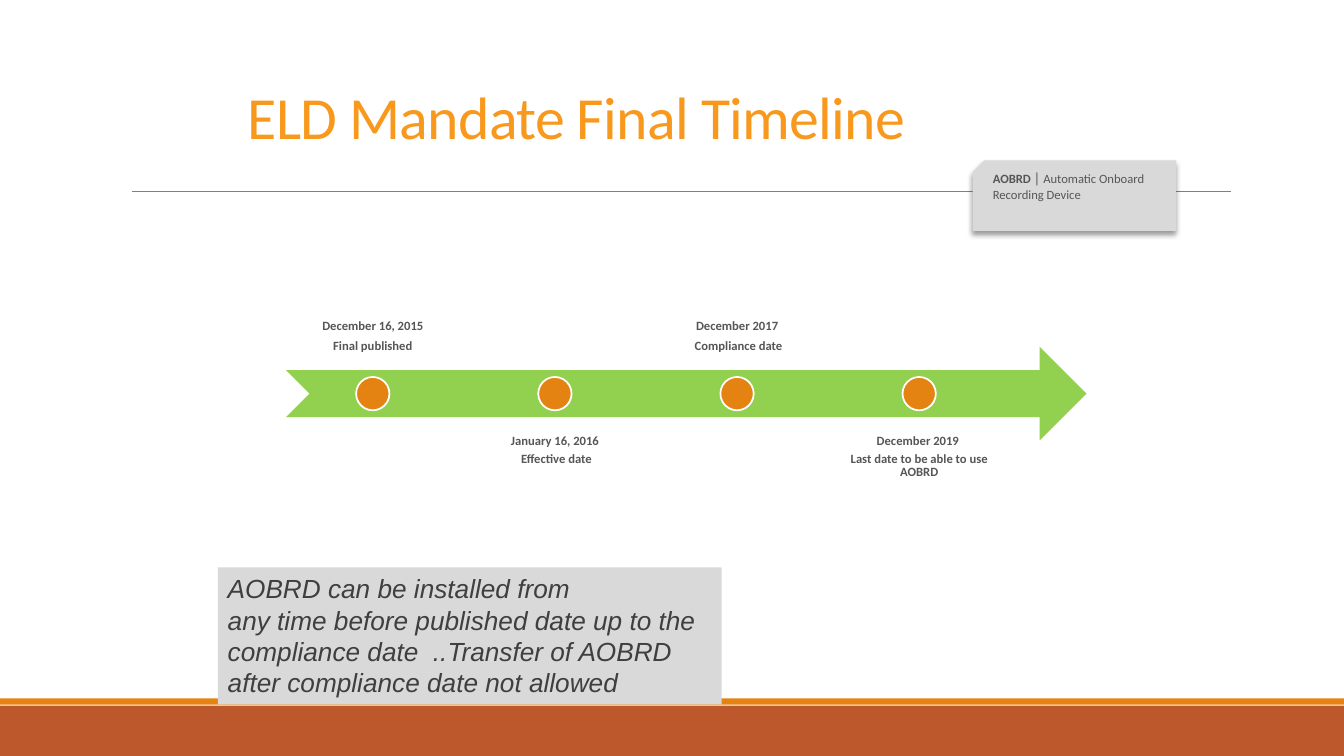
from lxml.etree import SubElement
from pptx import Presentation
from pptx.dml.color import RGBColor
from pptx.enum.shapes import MSO_CONNECTOR as Connector, MSO_SHAPE as Preset
from pptx.enum.text import MSO_ANCHOR as Anchor, PP_ALIGN as Align
from pptx.oxml.ns import qn
from pptx.util import Cm, Pt

WHITE = RGBColor(0xFF, 0xFF, 0xFF)
BLACK = RGBColor(0x00, 0x00, 0x00)
RUST = RGBColor(0xBD, 0x58, 0x2C)
ORANGE = RGBColor(0xE4, 0x83, 0x12)
TITLE_ORANGE = RGBColor(0xF8, 0x99, 0x1D)
GREEN = RGBColor(0x92, 0xD0, 0x50)
RULE_GRAY = RGBColor(0x80, 0x80, 0x80)
PANEL_GRAY = RGBColor(0xD9, 0xD9, 0xD9)
LABEL_GRAY = RGBColor(0x56, 0x56, 0x56)
NOTE_GRAY = RGBColor(0x3F, 0x3F, 0x3F)

MILESTONES = [
    ("December 16, 2015", "Final published"),
    ("January 16, 2016", " Effective date"),
    ("December 2017", " Compliance date"),
    ("December 2019 ", "Last date to be able to use AOBRD"),
]
LABEL_LEFT, LABEL_WIDTH, LABEL_HEIGHT = 7.21, 4.37, 3.38
LABEL_STEP = 4.59
DOT_SIZE = 0.84


def add_solid(page, preset, left, top, width, height, fill, outline=None):
    shape = page.shapes.add_shape(preset, Cm(left), Cm(top), Cm(width), Cm(height))
    shape.shadow.inherit = False
    shape.fill.solid()
    shape.fill.fore_color.rgb = fill
    if outline is None:
        shape.line.fill.background()
    else:
        shape.line.color.rgb = outline
        shape.line.width = Pt(1.25)
    return shape


def add_rule(page, left, right, top):
    rule = page.shapes.add_connector(
        Connector.STRAIGHT, Cm(left), Cm(top), Cm(right), Cm(top))
    rule.line.color.rgb = RULE_GRAY
    rule.line.width = Pt(0.5)
    SubElement(rule._element.spPr, qn("a:effectLst"))


def add_text_box(page, left, top, width, height, anchor=Anchor.TOP):
    box = page.shapes.add_textbox(Cm(left), Cm(top), Cm(width), Cm(height))
    box.text_frame.word_wrap = True
    box.text_frame.vertical_anchor = anchor
    return box.text_frame


def add_span(para, text, size, color, font="Calibri", bold=False, italic=False):
    span = para.add_run()
    span.text = text
    span.font.name = font
    span.font.size = Pt(size)
    span.font.color.rgb = color
    span.font.bold = bold
    span.font.italic = italic
    return span


def add_drop_shadow(shape):
    effects = shape._element.spPr.find(qn("a:effectLst"))
    shadow = SubElement(effects, qn("a:outerShdw"), blurRad=str(Pt(4)),
                        dist=str(Pt(3)), dir="5400000", rotWithShape="0")
    color = SubElement(shadow, qn("a:srgbClr"), val=str(BLACK))
    SubElement(color, qn("a:alpha"), val="40000")


def add_milestone(page, index, lines):
    above = index % 2 == 0
    left = LABEL_LEFT + index * LABEL_STEP
    frame = add_text_box(page, left, 5.69 if above else 10.77, LABEL_WIDTH,
                         LABEL_HEIGHT, Anchor.BOTTOM if above else Anchor.TOP)
    frame.margin_left = frame.margin_right = Cm(0.18)
    frame.margin_top = frame.margin_bottom = Cm(0.18)
    for number, line in enumerate(lines):
        para = frame.add_paragraph() if number else frame.paragraphs[0]
        para.alignment = Align.CENTER
        para.line_spacing = 0.9
        para.space_after = Pt(4 if above else 3)
        add_span(para, line, 9, LABEL_GRAY, bold=True)
    add_solid(page, Preset.OVAL, left + (LABEL_WIDTH - DOT_SIZE) / 2, 9.5,
              DOT_SIZE, DOT_SIZE, ORANGE, WHITE)


def add_callout(page):
    panel = add_solid(page, Preset.SNIP_1_RECTANGLE, 24.51, 4.04, 5.13, 1.78, PANEL_GRAY)
    panel._element.spPr.find(qn("a:xfrm")).set("flipH", "1")
    add_drop_shadow(panel)
    para = add_text_box(page, 24.77, 4.14, 4.78, 1.09).paragraphs[0]
    add_span(para, "AOBRD ", 9, LABEL_GRAY, bold=True)
    add_span(para, "|", 10.5, LABEL_GRAY)
    add_span(para, " Automatic Onboard", 9, LABEL_GRAY)
    para.add_line_break()
    add_span(para, "Recording Device", 9, LABEL_GRAY)


def add_note(page):
    note = add_solid(page, Preset.RECTANGLE, 5.49, 14.3, 12.7, 3.45, PANEL_GRAY)
    frame = note.text_frame
    frame.word_wrap = True
    frame.vertical_anchor = Anchor.TOP
    para = frame.paragraphs[0]
    para.alignment = Align.LEFT
    add_span(para, "AOBRD can be installed from ", 18.7, NOTE_GRAY, "Arial", italic=True)
    para.add_line_break()
    add_span(para, "any time before published date up to the compliance date  "
             "..Transfer of AOBRD after compliance date not allowed",
             18.7, NOTE_GRAY, "Arial", italic=True)


def add_title(page):
    para = add_text_box(page, 5.99, 0.76, 22.38, 3.18, Anchor.BOTTOM).paragraphs[0]
    para.line_spacing = 0.85
    span = add_span(para, "ELD Mandate Final Timeline", 42.7, TITLE_ORANGE)
    span.font._element.set("spc", "-50")


def main():
    deck = Presentation()
    deck.slide_width, deck.slide_height = Cm(33.87), Cm(19.05)
    page = deck.slides.add_slide(deck.slide_layouts[6])
    add_solid(page, Preset.RECTANGLE, 0, 17.78, 33.87, 1.27, RUST)
    add_solid(page, Preset.RECTANGLE, 0, 17.6, 33.87, 0.16, ORANGE)
    add_rule(page, 3.33, 31.01, 4.83)
    add_solid(page, Preset.NOTCHED_RIGHT_ARROW, LABEL_LEFT, 8.74, 20.17, 2.36, GREEN)
    for index, lines in enumerate(MILESTONES):
        add_milestone(page, index, lines)
    add_callout(page)
    add_note(page)
    add_title(page)
    deck.save("out.pptx")


if __name__ == "__main__":
    main()
